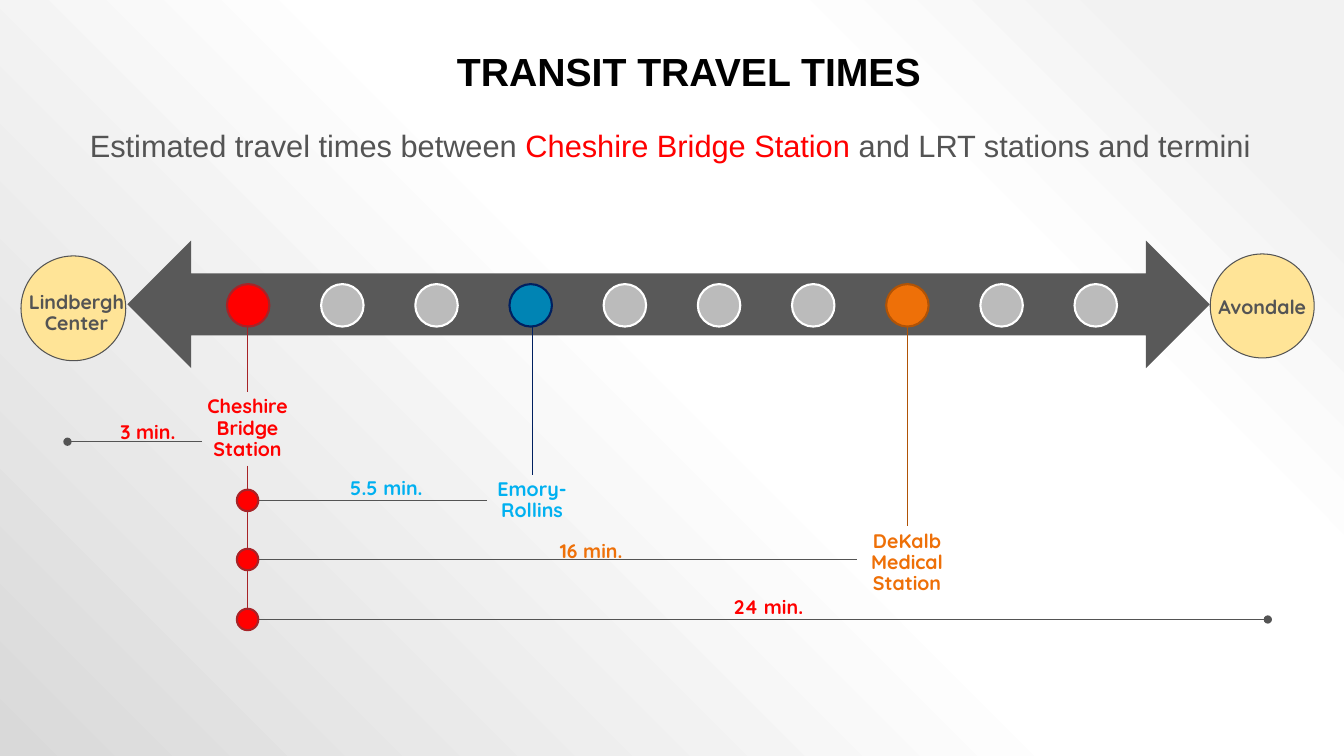
from pptx import Presentation
from pptx.dml.color import RGBColor
from pptx.enum.shapes import MSO_CONNECTOR, MSO_SHAPE
from pptx.enum.text import MSO_ANCHOR, PP_ALIGN
from pptx.oxml.ns import qn
from pptx.util import Cm, Pt
from lxml.etree import SubElement

COLORS = {
    "ink": "545454", "black": "000000", "arrow": "595959",
    "terminal": "FFE497", "stop": "BBBBBB", "white": "FFFFFF",
    "red": "FF0000", "red_line": "A72327",
    "blue": "0084B4", "blue_line": "002060", "sky": "00B0F0",
    "orange": "EE7008", "orange_line": "B05306",
    "pale": "F2F2F2", "grey": "D9D9D9",
}
LABEL_FONT = "Quicksand"
STOPS = 10
STOP_SIZE = 1.07


def rgb(name):
    return RGBColor.from_string(COLORS[name])


def add_background(s):
    fill = s.background.fill
    fill.gradient()
    grad = s._element.find(".//" + qn("a:gradFill"))
    for child in list(grad):
        grad.remove(child)
    stops = SubElement(grad, qn("a:gsLst"))
    for pos, name in [(10, "pale"), (28, "white"), (48, "white"), (100, "grey")]:
        gs = SubElement(stops, qn("a:gs"), pos=str(pos * 1000))
        SubElement(gs, qn("a:srgbClr"), val=COLORS[name])
    shade = SubElement(grad, qn("a:path"), path="circle")
    SubElement(shade, qn("a:fillToRect"), l="100000", b="100000")


def add_shape(s, kind, x, y, w, h, fill, line, width):
    sp = s.shapes.add_shape(kind, Cm(x), Cm(y), Cm(w), Cm(h))
    sp.shadow.inherit = False
    sp.fill.solid()
    sp.fill.fore_color.rgb = rgb(fill)
    sp.line.color.rgb = rgb(line)
    sp.line.width = Pt(width)
    return sp


def add_line(s, x1, y1, x2, y2, color, width, end_dot=False):
    c = s.shapes.add_connector(MSO_CONNECTOR.STRAIGHT, Cm(x1), Cm(y1), Cm(x2), Cm(y2))
    c.line.color.rgb = rgb(color)
    c.line.width = Pt(width)
    SubElement(c._element.spPr, qn("a:effectLst"))
    if end_dot:
        SubElement(c.line._get_or_add_ln(), qn("a:tailEnd"), type="oval")


def add_text(s, x, y, w, h, lines, color, size=14, font=LABEL_FONT, bold=True, inset=0.25):
    tf = s.shapes.add_textbox(Cm(x), Cm(y), Cm(w), Cm(h)).text_frame
    tf.word_wrap = True
    tf.margin_left = tf.margin_right = Cm(inset)
    tf.vertical_anchor = MSO_ANCHOR.TOP
    for i, line in enumerate(lines):
        p = tf.add_paragraph() if i else tf.paragraphs[0]
        p.alignment = PP_ALIGN.CENTER
        p.line_spacing = 0.9
        p.font.name = font
        p.font.size = Pt(size)
        p.font.bold = bold
        p.font.color.rgb = rgb(color)
        if line:
            p.add_run().text = line
    return tf


def add_header(s, x, y, w, h):
    add_text(s, x + 2.25, y, w - 3.56, h / 2, ["TRANSIT TRAVEL TIMES"],
             "black", 28, "Arial")
    tf = add_text(s, x, y + 1.98, w, h / 2, [""], "ink", 22, "Arial", bold=False)
    p = tf.paragraphs[0]
    for text, color in [("Estimated travel times between ", "ink"),
                        ("Cheshire Bridge Station ", "red"),
                        ("and LRT stations and termini", "ink")]:
        r = p.add_run()
        r.text = text
        r.font.color.rgb = rgb(color)


def add_terminal(s, x, y, size, lines, label_x, label_y):
    add_shape(s, MSO_SHAPE.OVAL, x, y, size, size, "terminal", "ink", 0.75)
    add_text(s, x + label_x, y + label_y, 2.9, 1.3, lines, "ink", inset=0)


def add_route(s, x, y, w, h):
    arrow = add_shape(s, MSO_SHAPE.LEFT_RIGHT_ARROW, x + 2.85, y, w - 5.65, h,
                      "arrow", "arrow", 6.75)
    SubElement(arrow.line._get_or_add_ln(), qn("a:miter"), lim="800000")
    add_terminal(s, x, y + 0.1, h, ["Lindbergh", "Center"], -0.05, 0.79)
    add_terminal(s, x + w - 2.62, y + 0.05, 2.62, ["Avondale"], -0.14, 0.97)
    special = {0: ("red", "red_line"), 3: ("blue", "blue_line"),
               7: ("orange", "orange_line")}
    first, last = x + 5.19, x + 26.55
    pitch = (last - first) / (STOPS - 1)
    for i in range(STOPS):
        fill, line = special.get(i, ("stop", "white"))
        add_shape(s, MSO_SHAPE.OVAL, first + i * pitch, y + 0.81,
                  STOP_SIZE, STOP_SIZE, fill, line, 1.5)


def add_travel_times(s, x, y, w, h):
    trunk = x + 4.54
    stations = [
        (trunk, 1.65, 2.64, ["Cheshire", "Bridge", "Station"], "red", "red_line"),
        (x + 11.71, 3.73, 3.68, ["Emory-", "Rollins"], "sky", "blue_line"),
        (x + 21.16, 5.03, 3.68, ["DeKalb Medical Station"], "orange", "orange_line"),
    ]
    for cx, drop, width, lines, color, line_color in stations:
        add_line(s, cx, y, cx, y + drop, line_color, 0.5)
        add_text(s, cx - width / 2, y + drop, width, 1.88, lines, color)
    add_line(s, trunk, y + 3.5, trunk, y + h, "red_line", 0.5)

    spans = [
        (x + 3.38, x, 2.9, "3 min.", x + 2.03, 2.29, "red", True),
        (trunk, x + 10.57, 4.38, "5.5 min.", x + 8.04, 3.71, "sky", False),
        (trunk, x + 19.89, 5.87, "16 min.", x + 13.2, 5.28, "orange", False),
        (trunk, x + w, 7.38, "24 min.", x + 17.67, 6.71, "red", True),
    ]
    dot = 0.54
    for start, end, row, label, label_cx, label_y, color, end_dot in spans:
        add_line(s, start, y + row, end, y + row, "ink", 1, end_dot)
        add_text(s, label_cx - 1.84, y + label_y, 3.68, 0.79, [label], color)
        if start == trunk:
            add_shape(s, MSO_SHAPE.OVAL, trunk - dot / 2, y + row - dot / 2, dot, dot,
                      "red", "red_line", 1.5)


def main():
    prs = Presentation()
    prs.slide_width = Cm(33.87)
    prs.slide_height = Cm(19.05)
    s = prs.slides.add_slide(prs.slide_layouts[6])
    add_background(s)
    add_header(s, 1.56, 1.19, 30.66, 4.32)
    add_route(s, 0.53, 6.35, 32.59, 2.64)
    add_travel_times(s, 1.7, 8.23, 30.25, 7.39)
    prs.save("out.pptx")


if __name__ == "__main__":
    main()
